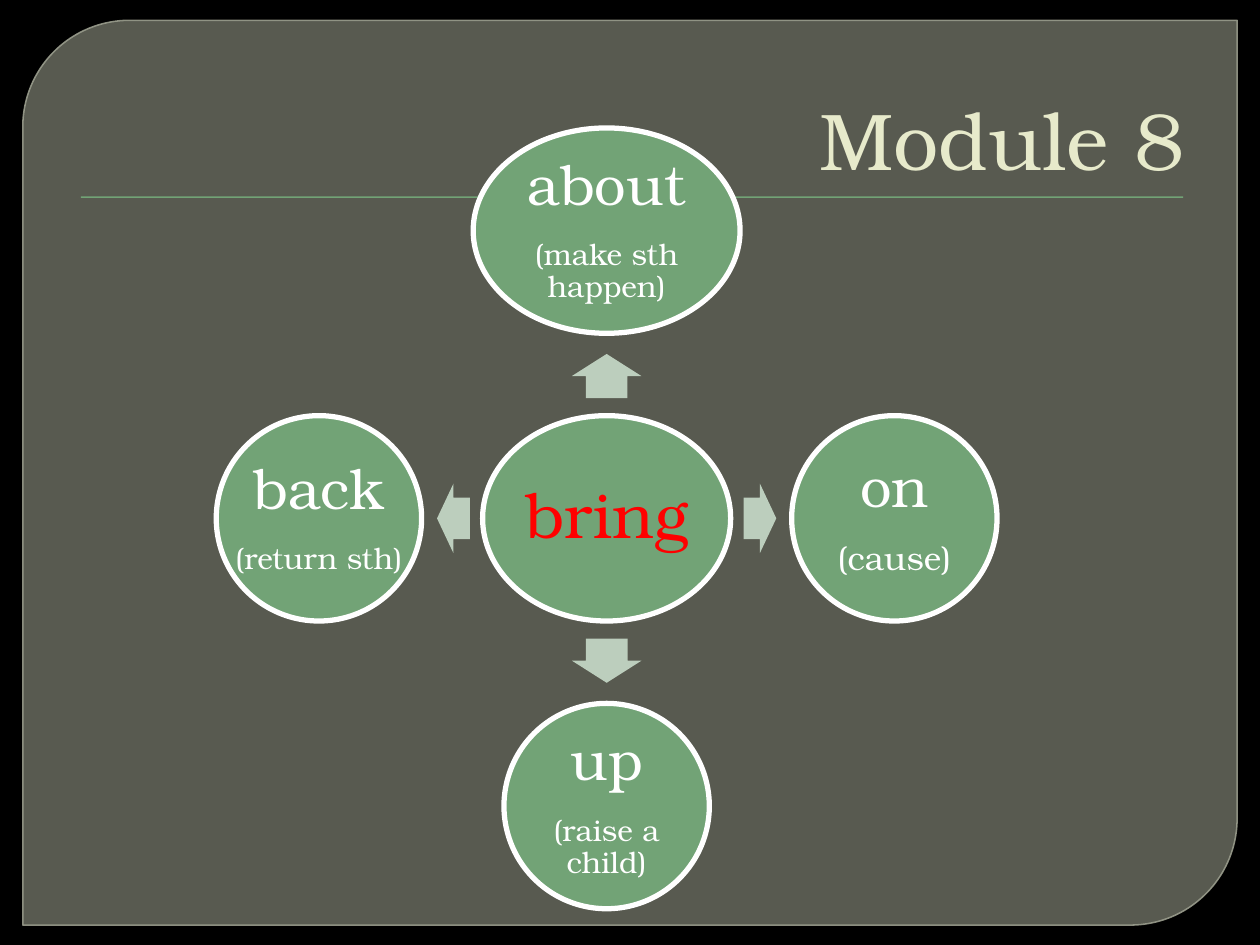
from lxml.etree import SubElement
from pptx import Presentation
from pptx.dml.color import RGBColor
from pptx.enum.shapes import MSO_SHAPE
from pptx.enum.text import MSO_ANCHOR, PP_ALIGN
from pptx.oxml.ns import qn
from pptx.util import Cm, Pt

BLACK = RGBColor(0x00, 0x00, 0x00)
OLIVE = RGBColor(0x88, 0x8B, 0x7B)
EDGE = RGBColor(0x9D, 0xA0, 0x90)
GREEN = RGBColor(0x72, 0xA3, 0x76)
PALE_GREEN = RGBColor(0xBC, 0xCE, 0xBD)
CREAM = RGBColor(0xE7, 0xEA, 0xCB)
WHITE = RGBColor(0xFF, 0xFF, 0xFF)
RED = RGBColor(0xFF, 0x00, 0x00)

CENTER_X, CENTER_Y = 12.23, 10.45
DIAMETER = 4.14
SPOKE = 5.8

SPOKES = [
    ("about", "(make sth happen)", 17, 5.38, True, (0, -1)),
    ("on", "(cause)", 19, DIAMETER, True, (1, 0)),
    ("up", "(raise a child)", 17, DIAMETER, True, (0, 1)),
    ("back", "(return sth)", 17, DIAMETER, False, (-1, 0)),
]
ROTATIONS = {(0, -1): 270, (1, 0): 0, (0, 1): 90, (-1, 0): 180}


class Diagram:
    font = "TeX Gyre Bonum"

    def __init__(self, slide):
        self.slide = slide
        fill = slide.background.fill
        fill.solid()
        fill.fore_color.rgb = BLACK

    def shape(self, kind, x, y, w, h, color, line=None, width=0):
        sp = self.slide.shapes.add_shape(kind, Cm(x), Cm(y), Cm(w), Cm(h))
        sp.shadow.inherit = False
        sp.fill.solid()
        sp.fill.fore_color.rgb = color
        if line is None:
            sp.line.fill.background()
        else:
            sp.line.color.rgb = line
            sp.line.width = Pt(width)
        return sp

    def frame(self):
        sp = self.shape(MSO_SHAPE.ROUND_2_DIAG_RECTANGLE, 0.46, 0.41, 24.48, 18.24, OLIVE, EDGE, 0.87)
        sp.adjustments[0] = 0.118
        sp.adjustments[1] = 0
        for color, alpha in zip(sp._element.spPr.iter(qn("a:srgbClr")), (65, 88)):
            SubElement(color, qn("a:alpha"), val=str(alpha * 1000))
        self.shape(MSO_SHAPE.RECTANGLE, 1.63, 3.96, 22.22, 0.03, GREEN)

    def paragraph(self, p, text, size, color, align=PP_ALIGN.CENTER):
        p.text = text
        p.alignment = align
        p.font.name = self.font
        p.font.size = Pt(size)
        p.font.color.rgb = color

    def title(self, text):
        sp = self.slide.shapes.title
        self.slide.shapes._spTree.append(sp._element)
        sp.left, sp.top, sp.width, sp.height = Cm(1.27), Cm(0.71), Cm(22.86), Cm(3.18)
        tf = sp.text_frame
        tf.vertical_anchor = MSO_ANCHOR.BOTTOM
        self.paragraph(tf.paragraphs[0], text, 46, CREAM, PP_ALIGN.RIGHT)

    def oval(self, x, y, width, lines, wrap):
        sp = self.shape(MSO_SHAPE.OVAL, x - width / 2, y - DIAMETER / 2, width, DIAMETER, GREEN, WHITE, 3)
        tf = sp.text_frame
        tf.word_wrap = wrap
        tf.vertical_anchor = MSO_ANCHOR.MIDDLE
        tf.margin_left = tf.margin_right = tf.margin_top = tf.margin_bottom = Cm(0.1)
        for i, (text, size, color) in enumerate(lines):
            p = tf.add_paragraph() if i else tf.paragraphs[0]
            self.paragraph(p, text, size, color)
            p.line_spacing = 0.9
            p.space_before = Pt(13 if i else 0)

    def arrow(self, x, y, length, rotation):
        height = 1.4
        sp = self.shape(MSO_SHAPE.RIGHT_ARROW, x - length / 2, y - height / 2, length, height, PALE_GREEN)
        sp.adjustments[0] = 0.6
        sp.adjustments[1] = 0.5
        sp.rotation = rotation


def main():
    prs = Presentation()
    prs.slide_width, prs.slide_height = Cm(25.4), Cm(19.05)
    s = Diagram(prs.slides.add_slide(prs.slide_layouts[5]))
    s.frame()
    s.title("Module 8")
    s.oval(CENTER_X, CENTER_Y, 5, [("bring", 36, RED)], False)
    for word, meaning, size, width, wrap, (dx, dy) in SPOKES:
        gap, length = (3.09, 0.66) if dx else (2.87, 0.89)
        s.arrow(CENTER_X + dx * gap, CENTER_Y + dy * gap, length, ROTATIONS[dx, dy])
        lines = [(word, 32, WHITE), (meaning, size, WHITE)]
        s.oval(CENTER_X + dx * SPOKE, CENTER_Y + dy * SPOKE, width, lines, wrap)
    prs.save("out.pptx")


if __name__ == "__main__":
    main()
